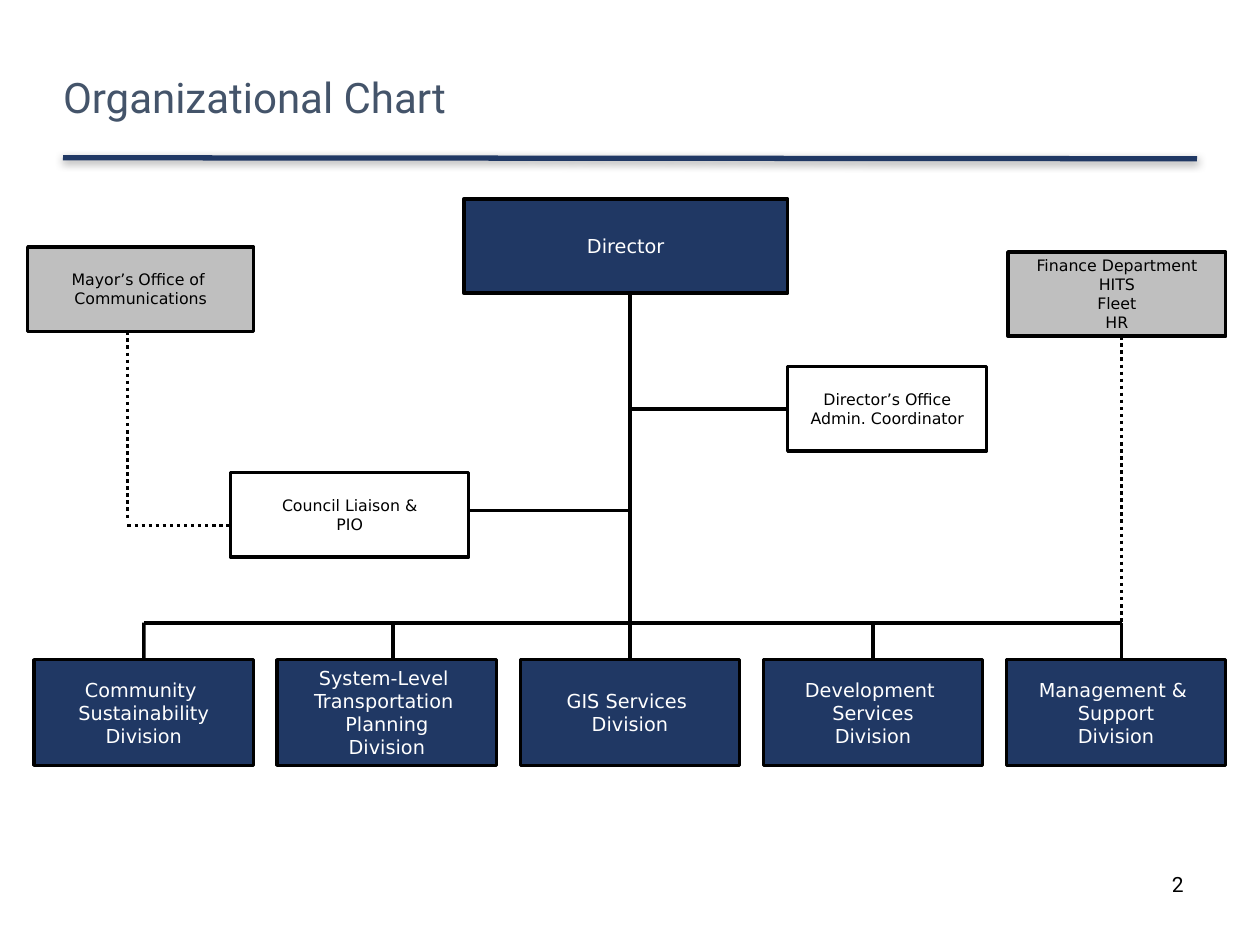
"""Build a one-slide organizational chart with five divisions under a director."""
from lxml.etree import SubElement
from pptx import Presentation
from pptx.dml.color import RGBColor
from pptx.enum.dml import MSO_LINE
from pptx.enum.shapes import MSO_CONNECTOR, MSO_SHAPE
from pptx.enum.text import MSO_ANCHOR as Anchor, PP_ALIGN as Align
from pptx.oxml.ns import qn
from pptx.util import Cm, Pt

NAVY = RGBColor(0x20, 0x38, 0x64)
SLATE = RGBColor(0x44, 0x54, 0x6A)
GRAY = RGBColor(0xBF, 0xBF, 0xBF)
WHITE = RGBColor(0xFF, 0xFF, 0xFF)
BLACK = RGBColor(0, 0, 0)

DIVISION_LEFT, DIVISION_TOP, DIVISION_PITCH = 0.69, 13.3, 4.9
DIVISION_WIDTH, DIVISION_HEIGHT = 4.42, 2.13
TRUNK_X, BUS_Y = 12.7, 12.55


def write_lines(frame, lines, align, size, font_name, color):
    frame.text = "\n".join(lines)
    for paragraph in frame.paragraphs:
        paragraph.alignment = align
        for name, value in {"size": Pt(size), "name": font_name}.items():
            setattr(paragraph.font, name, value)
        paragraph.font.color.rgb = color


def add_line(slide, start, end, color=BLACK, width=2, dash=None):
    points = [Cm(value) for value in (*start, *end)]
    connector = slide.shapes.add_connector(MSO_CONNECTOR.STRAIGHT, *points)
    connector.line.color.rgb = color
    connector.line.width = Pt(width)
    if dash:
        connector.line.dash_style = dash
    effects = SubElement(connector._element.spPr, qn("a:effectLst"))
    return connector, effects


presentation = Presentation()
presentation.slide_width, presentation.slide_height = Cm(25.4), Cm(19.05)
slide = presentation.slides.add_slide(presentation.slide_layouts[5])

rule, effects = add_line(slide, (1.27, 3.18), (24.13, 3.2), NAVY, 3)
shadow = SubElement(effects, qn("a:outerShdw"), blurRad=str(Pt(5)), dist=str(Pt(1.6)),
                    dir="5400000", algn="t", rotWithShape="0")
shadow_color = SubElement(shadow, qn("a:srgbClr"), val=str(BLACK))
SubElement(shadow_color, qn("a:alpha"), val="38000")

title = slide.shapes.title
title_format = {"left": Cm(1.27), "top": Cm(0.84), "width": Cm(17.42), "height": Cm(2.34)}
for name, value in title_format.items():
    setattr(title, name, value)
frame_format = {"margin_left": 0, "margin_top": 0, "margin_right": 0, "margin_bottom": 0,
                "vertical_anchor": Anchor.MIDDLE, "word_wrap": True}
for name, value in frame_format.items():
    setattr(title.text_frame, name, value)
write_lines(title.text_frame, ["Organizational Chart"], Align.LEFT, 24, "Roboto", SLATE)
title.text_frame.paragraphs[0].line_spacing = 0.9

page_number = slide.shapes.add_textbox(Cm(18.19), Cm(17.45), Cm(5.92), Cm(1.02))
page_number.text_frame.word_wrap = True
write_lines(page_number.text_frame, ["2"], Align.RIGHT, 12, "Roboto", BLACK)

division_names = [
    ["Community ", "Sustainability", "Division"],
    ["System-Level ", "Transportation ", "Planning", "Division"],
    ["GIS Services ", "Division"],
    ["Development ", "Services", "Division"],
    ["Management & ", "Support", "Division"],
]
boxes = [
    (["Director"], (9.35, 4.01, 6.53, 1.9), NAVY, WHITE, 11),
    (["Director’s Office", "Admin. Coordinator"], (15.88, 7.39, 4.01, 1.7), WHITE, BLACK, 9),
    (["Council Liaison &", "PIO"], (4.65, 9.53, 4.8, 1.7), WHITE, BLACK, 9),
    (["Mayor’s Office of ", "Communications"], (0.56, 4.98, 4.55, 1.7), GRAY, BLACK, 9),
    (["Finance Department", "HITS", "Fleet", "HR"], (20.32, 5.08, 4.39, 1.7), GRAY, BLACK, 9),
]
for index, lines in enumerate(division_names):
    left = DIVISION_LEFT + index * DIVISION_PITCH
    boxes.append((lines, (left, DIVISION_TOP, DIVISION_WIDTH, DIVISION_HEIGHT), NAVY, WHITE, 11))

shapes = []
for lines, position, fill, color, size in boxes:
    shape = slide.shapes.add_shape(MSO_SHAPE.RECTANGLE, *[Cm(value) for value in position])
    shape.shadow.inherit = False
    shape.fill.solid()
    shape.fill.fore_color.rgb = fill
    shape.line.color.rgb = BLACK
    shape.line.width = Pt(2)
    for name, value in {"word_wrap": False, "vertical_anchor": Anchor.MIDDLE}.items():
        setattr(shape.text_frame, name, value)
    write_lines(shape.text_frame, lines, Align.CENTER, size, "DejaVu Sans", color)
    shapes.append(shape)
director, coordinator, liaison, mayor, finance, *divisions = shapes

trunk, _ = add_line(slide, (TRUNK_X, 5.91), (TRUNK_X, DIVISION_TOP))
trunk.end_connect(divisions[2], 0)
branch, _ = add_line(slide, (15.88, 8.24), (TRUNK_X, 8.24))
branch.begin_connect(coordinator, 1)
add_line(slide, (TRUNK_X, 10.29), (9.45, 10.29))

add_line(slide, (2.9, BUS_Y), (22.61, BUS_Y), width=2.25)
for x, joined_division in [(2.9, divisions[0]), (7.92, None), (17.6, divisions[3]), (22.61, None)]:
    drop, _ = add_line(slide, (x, BUS_Y), (x, DIVISION_TOP))
    if joined_division:
        drop.end_connect(joined_division, 0)

dotted_lines = [
    ((22.61, 6.78), (22.61, DIVISION_TOP)),
    ((2.57, 6.68), (2.57, 10.49)),
    ((2.57, 10.59), (4.65, 10.59)),
]
for start, end in dotted_lines:
    add_line(slide, start, end, dash=MSO_LINE.ROUND_DOT)

presentation.save("out.pptx")
